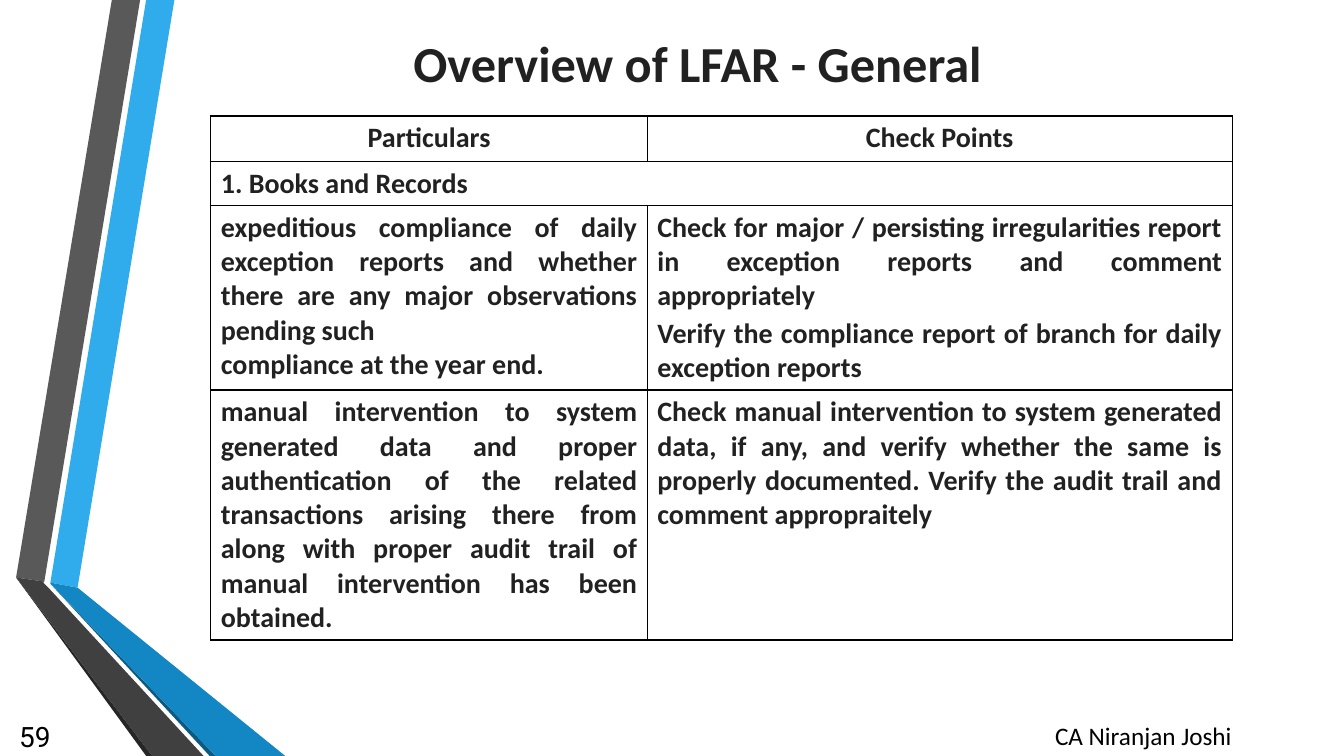
from lxml import etree
from pptx import Presentation
from pptx.dml.color import RGBColor
from pptx.enum.text import MSO_ANCHOR as Anchor, PP_ALIGN as Align
from pptx.oxml.ns import qn
from pptx.util import Inches, Pt

COLORS = {
    "blue": "30ACEC", "blue_mid": "1287C3", "blue_dark": "0C5A82",
    "grey": "595959", "grey_mid": "404040", "grey_dark": "262626",
    "ink": "212121", "black": "000000",
}


def add_run(p, text, size, color="ink", bold=True, font="Calibri"):
    r = p.add_run()
    r.text = text
    r.font.name, r.font.size, r.font.bold = font, Pt(size), bold
    r.font.color.rgb = RGBColor.from_string(COLORS[color])


def set_borders(cell):
    """Draw a thin black line on all four sides of a cell."""
    tcPr = cell._tc.get_or_add_tcPr()
    for i, side in enumerate(("a:lnL", "a:lnR", "a:lnT", "a:lnB")):
        ln = etree.Element(qn(side), w=str(Pt(1)))
        fill = etree.SubElement(ln, qn("a:solidFill"))
        etree.SubElement(fill, qn("a:srgbClr"), val=COLORS["black"])
        tcPr.insert(i, ln)


prs = Presentation()
prs.slide_width, prs.slide_height = Inches(13.33), Inches(7.5)
s = prs.slides.add_slide(prs.slide_layouts[6])

# Folded ribbons on the left edge
ribbons = [
    ("blue", [(0.5, 5.78), (0.77, 5.83), (1.73, 0), (1.45, 0)]),
    ("grey", [(1.39, 0), (1.11, 0), (0.16, 5.73), (0.44, 5.77)]),
    ("grey_dark", [(0.16, 5.73), (1.45, 7.5), (1.51, 7.5)]),
    ("blue_dark", [(0.5, 5.79), (2.08, 7.5), (2.14, 7.5)]),
    ("blue_mid", [(0.5, 5.79), (2.14, 7.5), (2.83, 7.5), (0.77, 5.83), (0.5, 5.78)]),
    ("grey_mid", [(2.02, 7.5), (0.48, 5.83), (0.43, 5.78), (0.44, 5.77),
                  (0.16, 5.73), (1.51, 7.5)]),
]
for color, points in ribbons:
    corners = [(Inches(x), Inches(y)) for x, y in points]
    builder = s.shapes.build_freeform(*corners[0])
    builder.add_line_segments(corners[1:], close=True)
    sp = builder.convert_to_shape()
    sp.shadow.inherit = False
    sp.fill.solid()
    sp.fill.fore_color.rgb = RGBColor.from_string(COLORS[color])
    sp.line.fill.background()

# Title, footer and slide number
labels = [
    ((2.42, 0.25, 9, 0.74), Align.CENTER, Anchor.MIDDLE,
     ("Overview of LFAR - General", 36)),
    ((9.59, 7.1, 3.5, 0.4), Align.CENTER, Anchor.TOP,
     ("CA Niranjan Joshi", 18, "black", False)),
    ((0, 7.1, 0.6, 0.4), Align.RIGHT, Anchor.MIDDLE,
     ("59", 20, "black", False, "Roboto")),
]
for box, align, anchor, run in labels:
    tf = s.shapes.add_textbox(*map(Inches, box)).text_frame
    tf.word_wrap = True
    tf.vertical_anchor = anchor
    p = tf.paragraphs[0]
    p.alignment = align
    add_run(p, *run)

# Table of particulars and check points; each cell is a list of paragraphs
rows = [
    (0.45, ["Particulars"], ["Check Points"]),
    (0.44, ["1. Books and Records"], []),
    (1.83,
     ["expeditious compliance of daily exception reports and whether there are "
      "any major observations pending such",
      "compliance at the year end."],
     ["Check for major / persisting irregularities report in exception reports "
      "and comment appropriately",
      "Verify the compliance report of branch for daily exception reports"]),
    (2.48,
     ["manual intervention to system generated data and proper authentication of "
      "the related transactions arising there from along with proper audit trail "
      "of manual intervention has been obtained."],
     ["Check manual intervention to system generated data, if any, and verify "
      "whether the same is properly documented. Verify the audit trail and "
      "comment appropraitely"]),
]
table = s.shapes.add_table(len(rows), 2, Inches(2.09), Inches(1.15),
                           Inches(10.13), Inches(5.2)).table
table.first_row = table.horz_banding = False
for column, width in zip(table.columns, (4.33, 5.8)):
    column.width = Inches(width)
for i, (height, *texts) in enumerate(rows):
    table.rows[i].height = Inches(height)
    for j, paragraphs in enumerate(texts):
        cell = table.cell(i, j)
        cell.fill.background()
        set_borders(cell)
        for n, text in enumerate(paragraphs):
            tf = cell.text_frame
            p = tf.add_paragraph() if n else tf.paragraphs[0]
            p.alignment = Align.JUSTIFY if i else Align.CENTER
            if n and j:
                p.space_before = Pt(2)
            add_run(p, text, 20)
table.cell(1, 0).merge(table.cell(1, 1))

prs.save("out.pptx")
